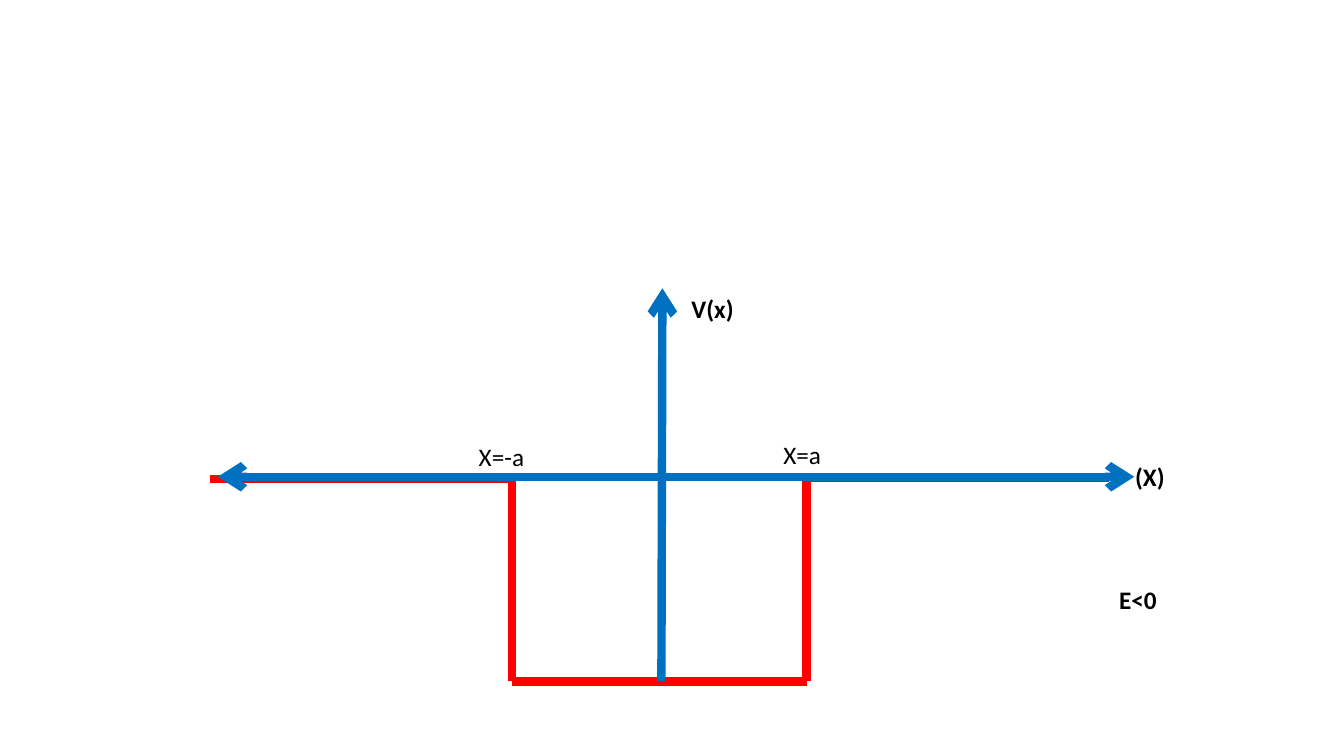
from lxml import etree
from pptx import Presentation
from pptx.dml.color import RGBColor
from pptx.enum.shapes import MSO_CONNECTOR
from pptx.enum.text import MSO_AUTO_SIZE
from pptx.oxml.ns import qn
from pptx.util import Pt

STRAIGHT = MSO_CONNECTOR.STRAIGHT
FIT = MSO_AUTO_SIZE.SHAPE_TO_FIT_TEXT
PX = 9144
THEME = {
    "well": RGBColor(0xFF, 0x00, 0x00),
    "axis": RGBColor(0x00, 0x70, 0xC0),
    "text": RGBColor(0x00, 0x00, 0x00),
    "font": "Calibri",
    "size": Pt(18),
    "line": Pt(6),
}


def add_line(s, start, end, color, arrows=()):
    c = s.shapes.add_connector(STRAIGHT, *(v * PX for v in start + end))
    c.line.color.rgb = THEME[color]
    c.line.width = THEME["line"]
    ln = c.line._get_or_add_ln()
    for tag in arrows:
        etree.SubElement(ln, qn(tag)).set("type", "arrow")
    etree.SubElement(c._element.spPr, qn("a:effectLst"))


prs = Presentation()
prs.slide_width, prs.slide_height = 1333 * PX, 750 * PX
s = prs.slides.add_slide(prs.slide_layouts[6])

left, right, top, bottom = 508, 800, 474, 676
well = [
    ((208, 475), (left, 475)),
    ((left, top), (left, bottom)),
    ((right, bottom), (left, bottom)),
    ((right, top), (right, bottom)),
    ((right, top), (1100, top)),
]
for start, end in well:
    add_line(s, start, end, "well")

add_line(s, (216, 473), (1125, 473), "axis", ("a:headEnd", "a:tailEnd"))
add_line(s, (656, bottom), (657, 286), "axis", ("a:tailEnd",))

labels = [
    ("V(x)", 676, 286, 62, True, False),
    ("(X)", 1116, 453, 80, True, True),
    ("X=-a", 465, 433, 66, False, False),
    ("X=a", 767, 431, 58, False, False),
    ("E<0", 1100, 575, 58, True, False),
]
for text, x, y, w, bold, wrap in labels:
    tf = s.shapes.add_textbox(x * PX, y * PX, w * PX, 40 * PX).text_frame
    tf.word_wrap = wrap
    tf.auto_size = FIT
    r = tf.paragraphs[0].add_run()
    r.text = text
    fmt = {"name": THEME["font"], "size": THEME["size"], "bold": bold}
    for key, value in fmt.items():
        setattr(r.font, key, value)
    r.font.color.rgb = THEME["text"]

prs.save("out.pptx")
